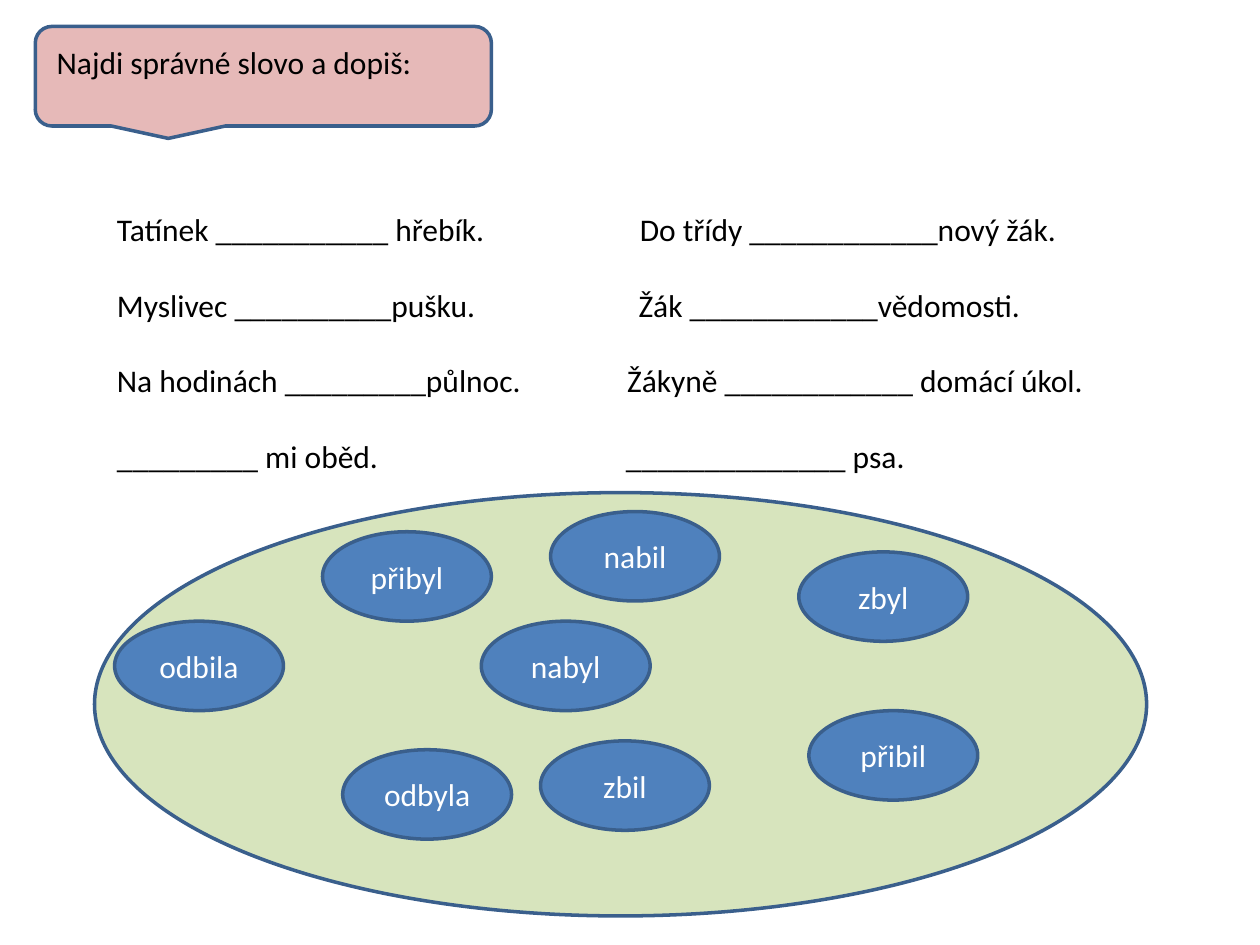
"""Build a Czech fill-in worksheet slide with a bank of words."""
from dataclasses import dataclass

from lxml import etree
from pptx import Presentation
from pptx.dml.color import RGBColor
from pptx.enum import shapes, text
from pptx.oxml import ns
from pptx.util import Inches, Pt


@dataclass(frozen=True)
class Theme:
    font: str = "Calibri"
    size: int = 18
    ink: str = "000000"
    white: str = "FFFFFF"
    outline: str = "3A5F8C"
    pink: str = "E6B9B8"
    green: str = "D7E4BD"
    blue: str = "4F81BD"


theme = Theme()


def write(paragraph, words, color=theme.ink, align=text.PP_ALIGN.LEFT, after=0):
    run = paragraph.add_run()
    run.text = words
    run.font.name = theme.font
    run.font.size = Pt(theme.size)
    run.font.color.rgb = RGBColor.from_string(color)
    paragraph.alignment = align
    paragraph.space_before = Pt(0)
    paragraph.space_after = Pt(after)


def draw(kind, left, top, width, height, fill):
    shape = slide.shapes.add_shape(
        kind, Inches(left), Inches(top), Inches(width), Inches(height))
    shape.shadow.inherit = False
    shape.fill.solid()
    shape.fill.fore_color.rgb = RGBColor.from_string(fill)
    shape.line.color.rgb = RGBColor.from_string(theme.outline)
    shape.line.width = Pt(2)
    return shape


deck = Presentation()
deck.slide_width, deck.slide_height = Inches(10), Inches(7.5)
slide = deck.slides.add_slide(deck.slide_layouts[5])

callout = draw(shapes.MSO_SHAPE.ROUNDED_RECTANGULAR_CALLOUT,
               0.28, 0.21, 3.62, 0.79, theme.pink)

heading = slide.shapes.title
heading.left, heading.top = Inches(0.35), Inches(0.29)
heading.width, heading.height = Inches(4.49), Inches(0.4)
heading.text_frame.vertical_anchor = text.MSO_ANCHOR.TOP
heading.text_frame.auto_size = text.MSO_AUTO_SIZE.SHAPE_TO_FIT_TEXT
write(heading.text_frame.paragraphs[0], "Najdi správné slovo a dopiš:")
callout.element.addnext(heading.element)

draw(shapes.MSO_SHAPE.OVAL, 0.75, 3.91, 8.35, 3.36, theme.green)

word_bank = [
    ("nabyl", 3.82, 4.93),
    ("odbila", 0.91, 4.93),
    ("odbyla", 2.72, 5.95),
    ("přibyl", 2.56, 4.22),
    ("zbil", 4.29, 5.88),
    ("nabil", 4.37, 4.06),
    ("přibil", 6.42, 5.64),
    ("zbyl", 6.34, 4.38),
]
for word, left, top in word_bank:
    bubble = draw(shapes.MSO_SHAPE.OVAL, left, top, 1.34, 0.71, theme.blue)
    bubble.text_frame.vertical_anchor = text.MSO_ANCHOR.MIDDLE
    write(bubble.text_frame.paragraphs[0], word,
          color=theme.white, align=text.PP_ALIGN.CENTER)

sentence_pairs = [
    ("Tatínek ___________ hřebík.", "Do třídy ____________nový žák.", 4.15),
    ("Myslivec __________pušku.", "Žák ____________vědomosti.", 4.14),
    ("Na hodinách _________půlnoc.", "Žákyně ____________ domácí úkol.", 4.05),
    ("_________ mi oběd.", "______________ psa.", 4.04),
]
exercise = slide.shapes.add_textbox(
    Inches(0.83), Inches(1.62), Inches(8.74), Inches(2.22)).text_frame
exercise.word_wrap = True
exercise.auto_size = text.MSO_AUTO_SIZE.SHAPE_TO_FIT_TEXT
for row, (first, second, column) in enumerate(sentence_pairs):
    sentence = exercise.add_paragraph() if row else exercise.paragraphs[0]
    is_last = row == len(sentence_pairs) - 1
    write(sentence, f"{first}\t{second}", after=0 if is_last else 21.5)
    properties = sentence._p.get_or_add_pPr()
    tabs = etree.SubElement(properties, ns.qn("a:tabLst"))
    etree.SubElement(tabs, ns.qn("a:tab"), pos=str(Inches(column)), algn="l")

deck.save("out.pptx")
